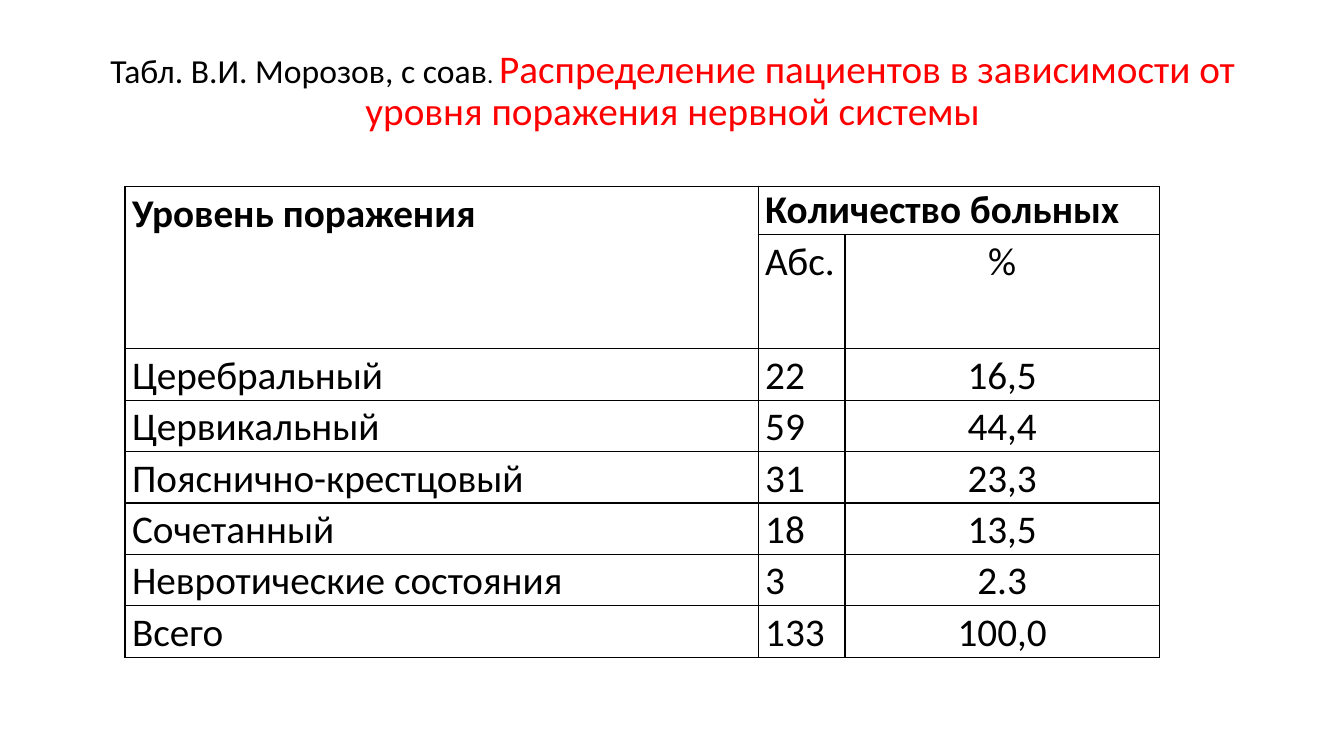
import pptx
import pptx.util
import pptx.dml.color
import pptx.enum.text
import pptx.oxml
import pptx.oxml.ns
from pptx.util import Inches

FONT = "Calibri"
TITLE = [
    ("Табл. В.И. Морозов, с соав", 24, "000000"),
    (". ", 18, "000000"),
    ("Распределение пациентов в зависимости от уровня поражения нервной системы", 28, "FF0000"),
]
ROWS = [
    ("Уровень поражения", "Количество больных", ""),
    ("", "Абс.", "%"),
    ("Церебральный", "22", "16,5"),
    ("Цервикальный", "59", "44,4"),
    ("Пояснично-крестцовый", "31", "23,3"),
    ("Сочетанный", "18", "13,5"),
    ("Невротические состояния", "3", "2.3"),
    ("Всего", "133", "100,0"),
]
COL_WIDTHS = [6.28, 0.86, 3.12]
ROW_HEIGHTS = [0.48, 1.13] + [0.51] * (len(ROWS) - 2)
CENTER = pptx.enum.text.PP_ALIGN.CENTER


def color(hex_value):
    return pptx.dml.color.RGBColor.from_string(hex_value)


def add_borders(cell):
    """Draw 1 pt black lines on all four sides of a cell."""
    tc_pr = cell._tc.get_or_add_tcPr()
    for i, side in enumerate(("lnL", "lnR", "lnT", "lnB")):
        tc_pr.insert(i, pptx.oxml.parse_xml(
            f'<a:{side} {pptx.oxml.ns.nsdecls("a")} w="12700"><a:solidFill>'
            f'<a:srgbClr val="000000"/></a:solidFill></a:{side}>'))


def add_title(s):
    tf = s.shapes.add_textbox(Inches(0.92), Inches(0.4), Inches(11.5), Inches(1.45)).text_frame
    tf.word_wrap = True
    tf.vertical_anchor = pptx.enum.text.MSO_ANCHOR.MIDDLE
    tf.margin_bottom = Inches(0.48)
    p = tf.paragraphs[0]
    p.alignment = CENTER
    p.line_spacing = 0.9
    p.font.name = FONT
    for text, size, hex_value in TITLE:
        r = p.add_run()
        r.text = text
        r.font.name = FONT
        r.font.size = pptx.util.Pt(size)
        r.font.color.rgb = color(hex_value)


def fill_cell(cell, text, row, col):
    cell.fill.background()
    cell.margin_left = cell.margin_right = Inches(0.07)
    cell.margin_top = cell.margin_bottom = 0
    add_borders(cell)
    p = cell.text_frame.paragraphs[0]
    p.text = text
    p.font.name = FONT
    p.font.size = pptx.util.Pt(28)
    p.font.bold = row == 0
    p.font.color.rgb = color("000000")
    if (row, col) != (0, 1):
        p.line_spacing = 1.07
        p.space_after = pptx.util.Pt(8)
    if col == 2:
        p.alignment = CENTER


def add_patient_table(s):
    table = s.shapes.add_table(
        len(ROWS), len(COL_WIDTHS), Inches(1.24), Inches(1.85),
        Inches(sum(COL_WIDTHS)), Inches(sum(ROW_HEIGHTS))).table
    table.first_row = table.horz_banding = False
    for column, width in zip(table.columns, COL_WIDTHS):
        column.width = Inches(width)
    for table_row, height in zip(table.rows, ROW_HEIGHTS):
        table_row.height = Inches(height)
    for row, texts in enumerate(ROWS):
        for col, text in enumerate(texts):
            fill_cell(table.cell(row, col), text, row, col)
    table.cell(0, 0).merge(table.cell(1, 0))
    table.cell(0, 1).merge(table.cell(0, 2))


def main():
    prs = pptx.Presentation()
    prs.slide_width, prs.slide_height = Inches(13.33), Inches(7.5)
    s = prs.slides.add_slide(prs.slide_layouts[6])
    add_title(s)
    add_patient_table(s)
    prs.save("out.pptx")


if __name__ == "__main__":
    main()
